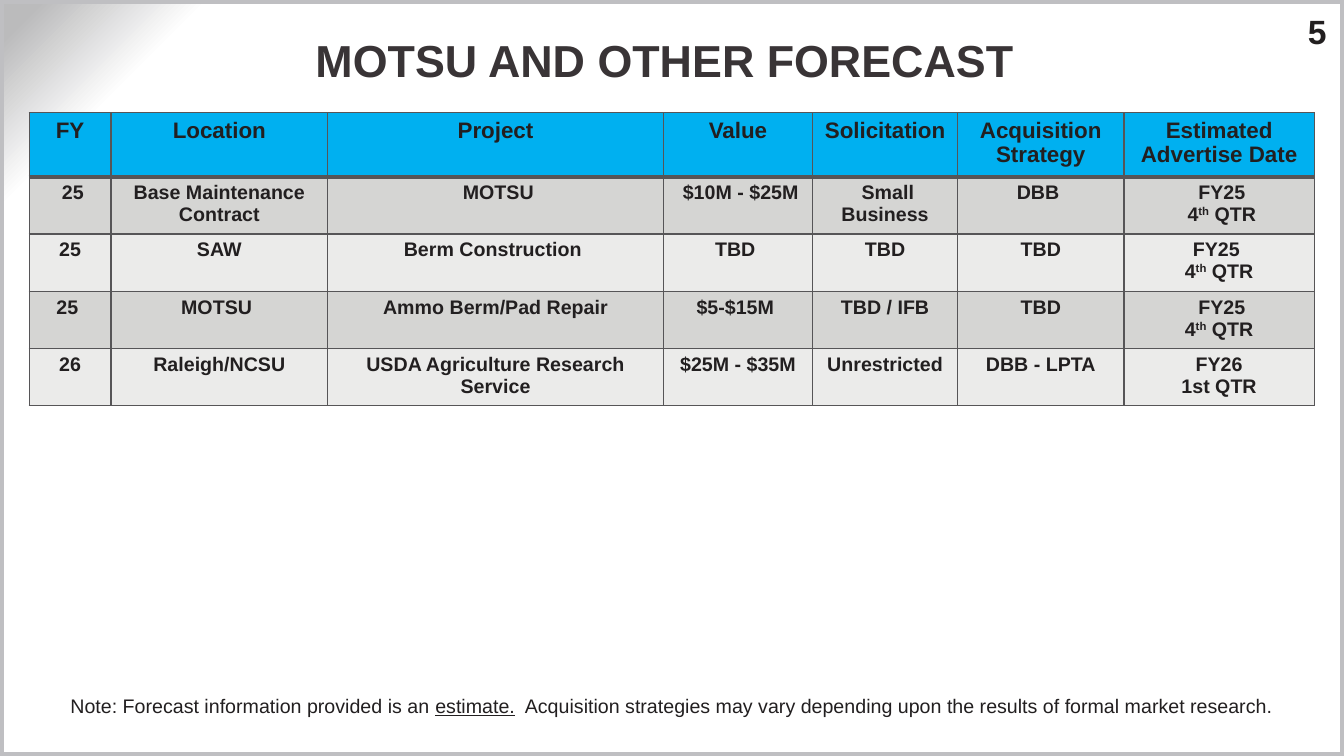
from dataclasses import dataclass

from lxml import etree
from pptx import Presentation
from pptx import util as u
from pptx.dml.color import RGBColor
from pptx.enum import shapes, text
from pptx.oxml import ns, parse_xml

Pt = u.Pt
ALIGN = text.PP_ALIGN


@dataclass(frozen=True)
class Theme:
    font: str = "Arial"
    ink: str = "221F20"
    title: str = "393436"
    head: str = "00B0F0"
    bands: tuple = ("D5D5D3", "EBEBEA")
    rule: str = "565557"
    frame: str = "BFBFC2"
    glow: tuple = ((0, "FFFFFF"), (87, "FFFFFF"), (90, "FFFFFF"),
                   (98, "BBBBBC"), (100, "BBBBBC"))
    big: int = 32
    num: int = 24
    label: int = 16
    body: int = 14


T = Theme()
WIDE, HIGH = 960, 540

COLS = (58.4, 154.8, 239.8, 106.6, 103.6, 118.8, 136)
HEAD_H, ROW_H = 45.7, 40.75
HEADS = ("FY", "Location", "Project", "Value", "Solicitation",
         "Acquisition Strategy", "Estimated Advertise Date")
# A line break starts a new paragraph; ^ marks the raised part.
ROWS = (
    (" 25", "Base Maintenance Contract", " MOTSU", " $10M - $25M",
     " Small Business", "DBB ", " FY25\n 4^th^ QTR"),
    ("25", "SAW", "Berm Construction ", "TBD ", "TBD", "TBD",
     "FY25 \n4^th^ QTR"),
    ("25 ", "MOTSU ", "Ammo Berm/Pad Repair", "$5-$15M ", "TBD / IFB", "TBD",
     " FY25\n4^th^ QTR"),
    ("26", "Raleigh/NCSU", "USDA Agriculture Research Service", "$25M - $35M",
     "Unrestricted", "DBB - LPTA", "FY26\n1st QTR"),
)
NOTE = (
    ("Note: Forecast information provided is an ", False),
    ("estimate.", True),
    ("  Acquisition strategies may vary depending upon the results of "
     "formal market research.", False),
)


def rgb(code):
    return RGBColor.from_string(code)


def add_run(para, words, size, bold=True, color=T.ink):
    run = para.add_run()
    run.text = words
    font = run.font
    font.name, font.size, font.bold = T.font, Pt(size), bold
    font.color.rgb = rgb(color)
    return run


def add_box(slide, box, pads, align, anchor=text.MSO_ANCHOR.TOP):
    """Add a text box and return its first paragraph."""
    frame = slide.shapes.add_textbox(*map(Pt, box)).text_frame
    frame.word_wrap = True
    frame.vertical_anchor = anchor
    (frame.margin_left, frame.margin_top,
     frame.margin_right, frame.margin_bottom) = map(Pt, pads)
    para = frame.paragraphs[0]
    para.alignment = align
    return para


def add_back(slide):
    """Shade the top left corner and frame the slide."""
    fill = slide.background.fill
    fill.solid()
    solid = slide._element.find(".//" + ns.qn("a:solidFill"))
    stops = "".join(f'<a:gs pos="{pos * 1000}"><a:srgbClr val="{code}"/></a:gs>'
                    for pos, code in T.glow)
    grad = parse_xml(
        f'<a:gradFill {ns.nsdecls("a")} rotWithShape="1"><a:gsLst>{stops}</a:gsLst>'
        '<a:path path="circle"><a:fillToRect l="100000" t="100000"/></a:path>'
        '</a:gradFill>')
    solid.getparent().replace(solid, grad)

    edge = slide.shapes.add_shape(shapes.MSO_SHAPE.RECTANGLE, 0, 0,
                                  Pt(WIDE), Pt(HIGH))
    edge.shadow.inherit = False
    edge.fill.background()
    edge.line.color.rgb = rgb(T.frame)
    edge.line.width = Pt(6)


def add_rules(cell, top, base):
    """Draw the four borders of a cell, ahead of its fill."""
    props = cell._tc.get_or_add_tcPr()
    sides = (("lnL", 1), ("lnR", 1), ("lnT", top), ("lnB", base))
    for spot, (side, width) in enumerate(sides):
        line = etree.Element(ns.qn("a:" + side), w=str(Pt(width)))
        fill = etree.SubElement(line, ns.qn("a:solidFill"))
        etree.SubElement(fill, ns.qn("a:srgbClr"), val=T.rule)
        props.insert(spot, line)


def fill_cell(cell, words, size, color):
    cell.fill.solid()
    cell.fill.fore_color.rgb = rgb(color)
    frame = cell.text_frame
    for row, line in enumerate(words.split("\n")):
        para = frame.add_paragraph() if row else frame.paragraphs[0]
        para.alignment = ALIGN.CENTER
        for part, piece in enumerate(line.split("^")):
            run = add_run(para, piece, size)
            if part % 2:
                run._r.get_or_add_rPr().set("baseline", "30000")


def add_grid(slide, box):
    shape = slide.shapes.add_table(len(ROWS) + 1, len(COLS), *map(Pt, box))
    table = shape.table
    table.horz_banding = False
    for col, width in zip(table.columns, COLS):
        col.width = Pt(width)
    for r, words in enumerate((HEADS, *ROWS)):
        table.rows[r].height = Pt(ROW_H if r else HEAD_H)
        color = T.bands[(r - 1) % 2] if r else T.head
        for c, word in enumerate(words):
            cell = table.cell(r, c)
            fill_cell(cell, word, T.body if r else T.label, color)
            add_rules(cell, 3 if r == 1 else 1, 1 if r else 3)


def add_title(slide, box):
    para = add_box(slide, box, (3.6, 0, 21.6, 0), ALIGN.CENTER,
                   text.MSO_ANCHOR.MIDDLE)
    add_run(para, "MOTSU AND OTHER FORECAST", T.big, color=T.title)


def add_num(slide, box):
    para = add_box(slide, box, (7.2, 3, 0, 0), ALIGN.RIGHT)
    add_run(para, "5", T.num)


def add_note(slide, box):
    para = add_box(slide, box, (7.2, 3.6, 7.2, 3.6), ALIGN.LEFT)
    for words, lined in NOTE:
        add_run(para, words, T.body, bold=False).font.underline = lined


def main():
    deck = Presentation()
    deck.slide_width, deck.slide_height = Pt(WIDE), Pt(HIGH)
    slide = deck.slides.add_slide(deck.slide_layouts[6])
    add_back(slide)
    add_num(slide, (904.3, 5, 43.2, 28.8))
    add_grid(slide, (20.9, 80.6, sum(COLS), HEAD_H + ROW_H * len(ROWS)))
    add_title(slide, (74.9, 10.1, 817.9, 65.5))
    add_note(slide, (43.2, 491.8, 874, 24.5))
    deck.save("out.pptx")


if __name__ == "__main__":
    main()
